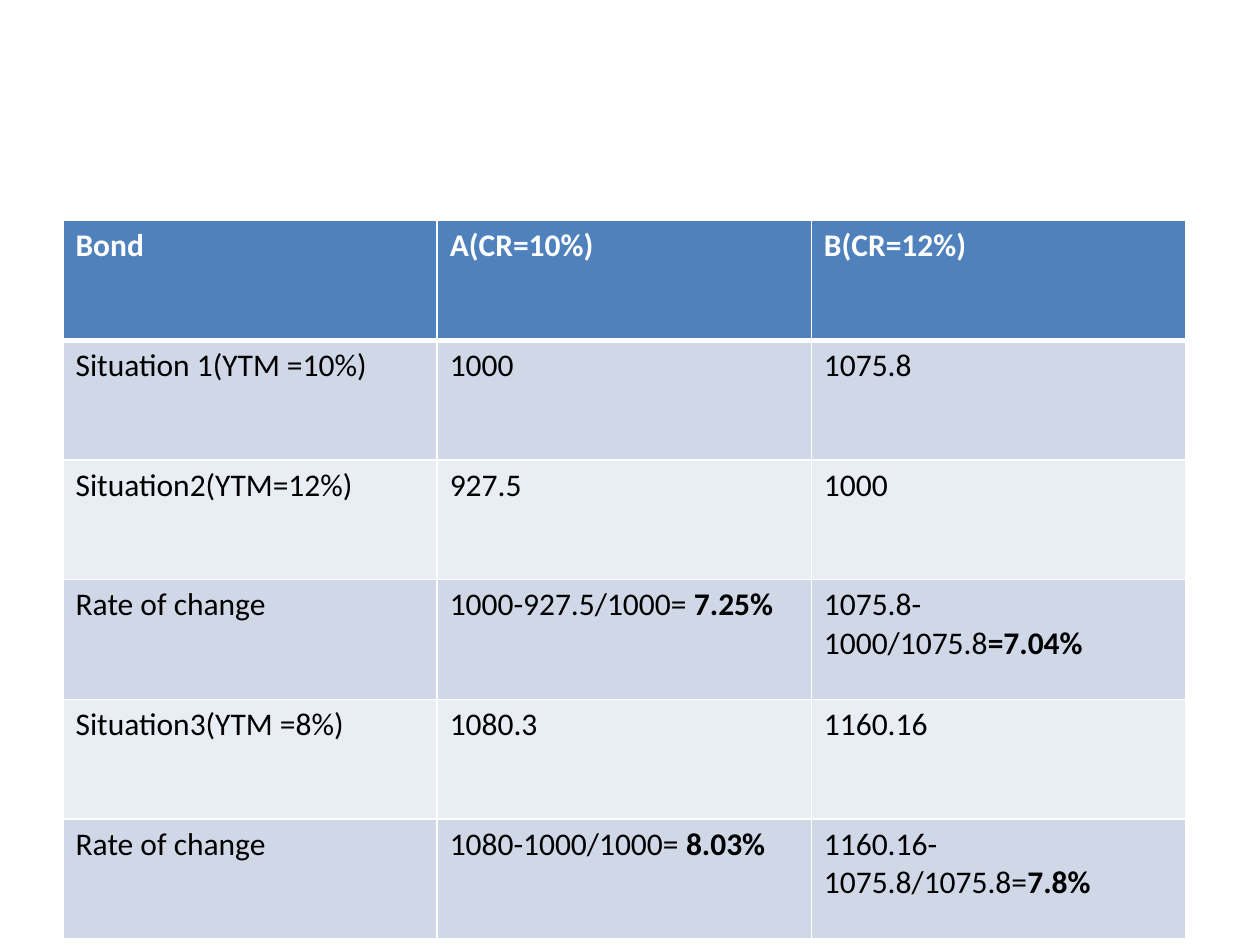
from dataclasses import dataclass

from lxml.etree import SubElement
from pptx import Presentation
from pptx.dml.color import RGBColor as RGB
from pptx.oxml.ns import qn
from pptx.util import Pt

PX = 9144  # 100 px to the inch


@dataclass(frozen=True)
class Theme:
    font: str = "Calibri"
    size: int = 18
    header_fill: str = "4F81BD"
    band_fills: tuple = ("E9EDF4", "D0D8E8")
    header_text: str = "FFFFFF"
    body_text: str = "000000"
    rule: str = "FFFFFF"
    thin: int = 1
    thick: int = 3


THEME = Theme()

# A tuple holds a plain part followed by a bold result.
BOND_ROWS = [
    ["Bond", "A(CR=10%)", "B(CR=12%)"],
    ["Situation 1(YTM =10%)", "1000", "1075.8"],
    ["Situation2(YTM=12%)", "927.5", "1000"],
    ["Rate of change", ("1000-927.5/1000= ", "7.25%"), ("1075.8-1000/1075.8", "=7.04%")],
    ["Situation3(YTM =8%)", "1080.3", "1160.16"],
    ["Rate of change", ("1080-1000/1000= ", "8.03%"), ("1160.16-1075.8/1075.8=", "7.8%")],
]
LEFT, TOP, COL_WIDTH, ROW_HEIGHT = 50, 175, 297, 95


def set_borders(cell, top, bottom):
    """Rule all four sides; the lines must precede the fill in tcPr."""
    properties = cell._tc.get_or_add_tcPr()
    widths = {"a:lnL": THEME.thin, "a:lnR": THEME.thin, "a:lnT": top, "a:lnB": bottom}
    for position, (side, width) in enumerate(widths.items()):
        line = SubElement(properties, qn(side), w=str(Pt(width)))
        paint = SubElement(line, qn("a:solidFill"))
        SubElement(paint, qn("a:srgbClr"), val=THEME.rule)
        properties.insert(position, line)


deck = Presentation()
deck.slide_width, deck.slide_height = 1000 * PX, 750 * PX
slide = deck.slides.add_slide(deck.slide_layouts[6])

row_count, col_count = len(BOND_ROWS), len(BOND_ROWS[0])
bonds = slide.shapes.add_table(
    row_count, col_count, LEFT * PX, TOP * PX,
    col_count * COL_WIDTH * PX, row_count * ROW_HEIGHT * PX,
).table

for r, entries in enumerate(BOND_ROWS):
    is_header = r == 0
    for c, entry in enumerate(entries):
        cell = bonds.cell(r, c)
        cell.fill.solid()
        cell.fill.fore_color.rgb = RGB.from_string(
            THEME.header_fill if is_header else THEME.band_fills[r % 2])
        set_borders(cell,
                    top=THEME.thick if r == 1 else THEME.thin,
                    bottom=THEME.thick if is_header else THEME.thin)

        paragraph = cell.text_frame.paragraphs[0]
        font = paragraph.font
        font.name, font.size, font.bold = THEME.font, Pt(THEME.size), is_header
        font.color.rgb = RGB.from_string(
            THEME.header_text if is_header else THEME.body_text)
        formula, *result = entry if isinstance(entry, tuple) else (entry,)
        paragraph.add_run().text = formula
        for value in result:
            rate = paragraph.add_run()
            rate.text = value
            rate.font.bold = True

deck.save("out.pptx")
